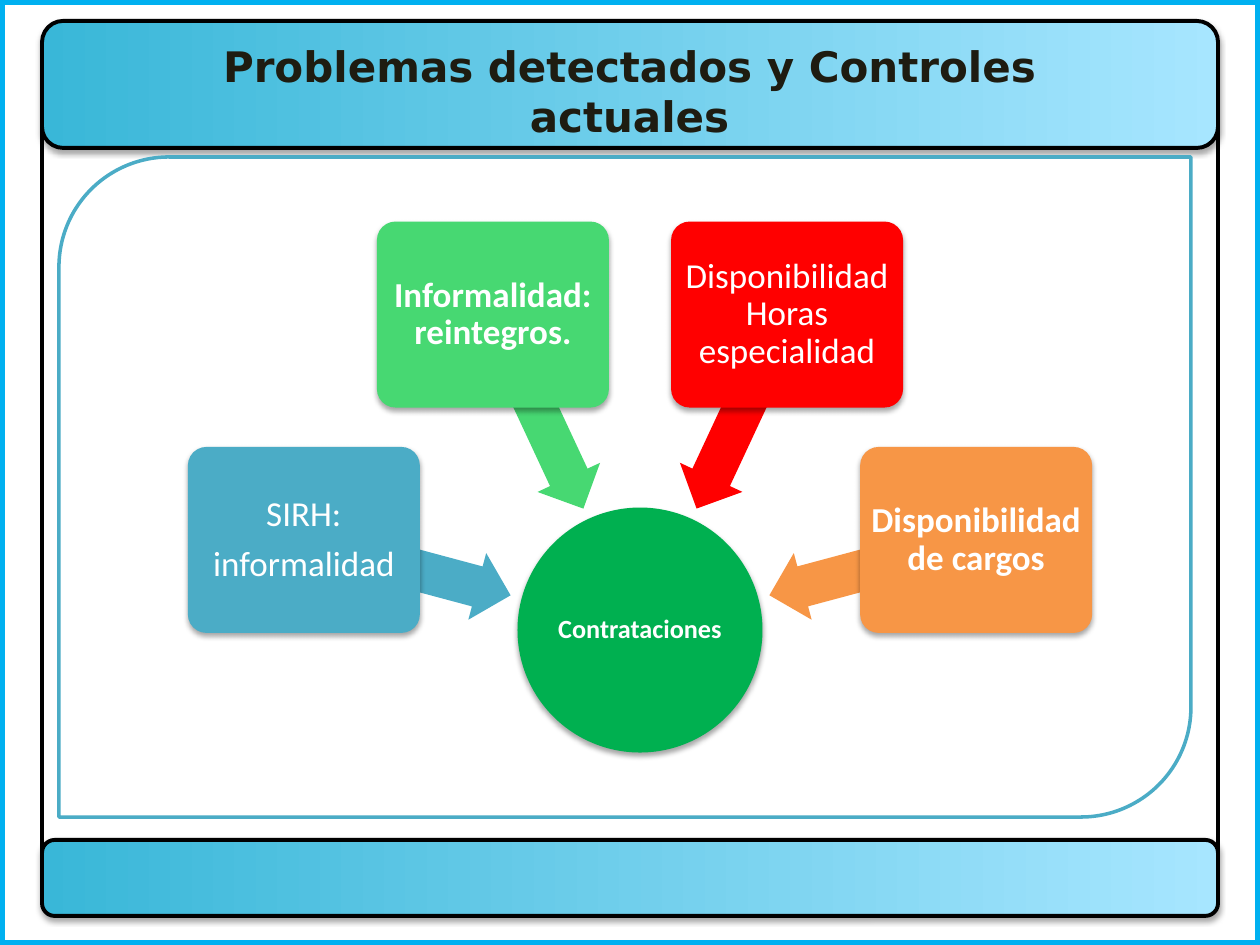
import math
from dataclasses import dataclass

from lxml import etree
from pptx import Presentation
from pptx.dml.color import RGBColor
from pptx.enum import shapes, text
from pptx.oxml import ns
from pptx.util import Pt

EMU_PER_PX = 914400 / 126
KIND = shapes.MSO_SHAPE


@dataclass(frozen=True)
class Theme:
    white: str = "FFFFFF"
    black: str = "000000"
    ink: str = "1E1C11"
    border: str = "00B0F0"
    bar_start: str = "39B7D8"
    bar_end: str = "A7E6FF"
    teal: str = "4BACC6"
    light_green: str = "47D872"
    red: str = "FF0000"
    orange: str = "F79646"
    hub: str = "00B050"
    title_font: str = "DejaVu Sans"
    body_font: str = "Calibri"
    title_size: int = 24
    cause_size: int = 20
    hub_size: int = 15


THEME = Theme()


def px(value):
    return round(value * EMU_PER_PX)


def rgb(color):
    return RGBColor.from_string(color)


def add_shadow(shape):
    effects = shape._element.spPr.find(ns.qn("a:effectLst"))
    shadow = etree.SubElement(effects, ns.qn("a:outerShdw"), blurRad="40000",
                              dist="23000", dir="5400000", rotWithShape="0")
    color = etree.SubElement(shadow, ns.qn("a:srgbClr"), val=THEME.black)
    etree.SubElement(color, ns.qn("a:alpha"), val="35000")


def add_block(page, kind, left, top, width, height, fill, line=None,
              line_width=0, shadow=False):
    shape = page.shapes.add_shape(kind, px(left), px(top), px(width), px(height))
    shape.shadow.inherit = False
    shape.fill.solid()
    shape.fill.fore_color.rgb = rgb(fill)
    if line:
        shape.line.color.rgb = rgb(line)
        shape.line.width = Pt(line_width)
    else:
        shape.line.fill.background()
    if shadow:
        add_shadow(shape)
    return shape


def add_centered(page, kind, center, size, fill, shadow=False):
    left, top = (middle - length / 2 for middle, length in zip(center, size))
    return add_block(page, kind, left, top, *size, fill, shadow=shadow)


def add_bar(page, top, height):
    bar = add_block(page, KIND.FLOWCHART_ALTERNATE_PROCESS, 42, top, 1176, height,
                    THEME.bar_start, THEME.black, 2.25, shadow=True)
    bar.fill.gradient()
    bar.fill.gradient_angle = 0
    for stop, color in zip(bar.fill.gradient_stops, (THEME.bar_start, THEME.bar_end)):
        stop.color.rgb = rgb(color)


def write(box, lines, font, size, color, bold, spacing=1.0, inset=None):
    frame = box.text_frame
    frame.word_wrap = True
    frame.vertical_anchor = text.MSO_ANCHOR.MIDDLE
    if inset is not None:
        frame.margin_left = frame.margin_right = px(inset)
        frame.margin_top = frame.margin_bottom = px(inset)
    for index, line in enumerate(lines):
        para = frame.add_paragraph() if index else frame.paragraphs[0]
        para.alignment = text.PP_ALIGN.CENTER
        para.line_spacing = spacing
        if index:
            para.space_before = Pt(size * 0.35)
        span = para.add_run()
        span.text = line
        span.font.name = font
        span.font.size = Pt(size)
        span.font.bold = bold
        span.font.color.rgb = rgb(color)


def add_background(page):
    add_block(page, KIND.RECTANGLE, 0, 0, 1260, 945, THEME.white, THEME.border, 6)
    add_block(page, KIND.FLOWCHART_PROCESS, 42, 63, 1176, 798,
              THEME.white, THEME.black, 2.25)
    add_bar(page, 21, 127)
    add_bar(page, 840, 76)
    add_block(page, KIND.ROUND_2_DIAG_RECTANGLE, 59, 157, 1132, 660,
              THEME.white, THEME.teal, 2)


def add_title(page, title):
    box = page.shapes.add_textbox(px(136), px(32), px(987), px(117))
    write(box, [title], THEME.title_font, THEME.title_size, THEME.ink, True)


def add_cause(page, hub_center, angle, lines, color, bold):
    def around(radius):
        turn = math.radians(angle)
        return (hub_center[0] + radius * math.cos(turn),
                hub_center[1] + radius * math.sin(turn))

    arrow = add_centered(page, KIND.LEFT_ARROW, around(241), (214, 69), color)
    arrow.adjustments[0] = 0.6
    arrow.adjustments[1] = 0.5
    arrow.rotation = angle
    box = add_centered(page, KIND.ROUNDED_RECTANGLE, around(348), (232, 186),
                       color, shadow=True)
    box.adjustments[0] = 0.1
    write(box, lines, THEME.body_font, THEME.cause_size, THEME.white, bold, 0.9, 4)


def add_radial_diagram(page):
    center = (640, 630)
    causes = [
        (["SIRH:", "informalidad"], THEME.teal, False),
        (["Informalidad: reintegros."], THEME.light_green, True),
        (["Disponibilidad Horas especialidad"], THEME.red, False),
        (["Disponibilidad de cargos"], THEME.orange, True),
    ]
    hub = add_centered(page, KIND.OVAL, center, (245, 245), THEME.hub, shadow=True)
    write(hub, ["Contrataciones"], THEME.body_font, THEME.hub_size, THEME.white,
          True, 0.9, 1)
    for index, cause in enumerate(causes):
        add_cause(page, center, 195 + 50 * index, *cause)


def main():
    deck = Presentation()
    deck.slide_width, deck.slide_height = px(1260), px(945)
    page = deck.slides.add_slide(deck.slide_layouts[6])
    add_background(page)
    add_title(page, "Problemas detectados y Controles actuales")
    add_radial_diagram(page)
    deck.save("out.pptx")


if __name__ == "__main__":
    main()
